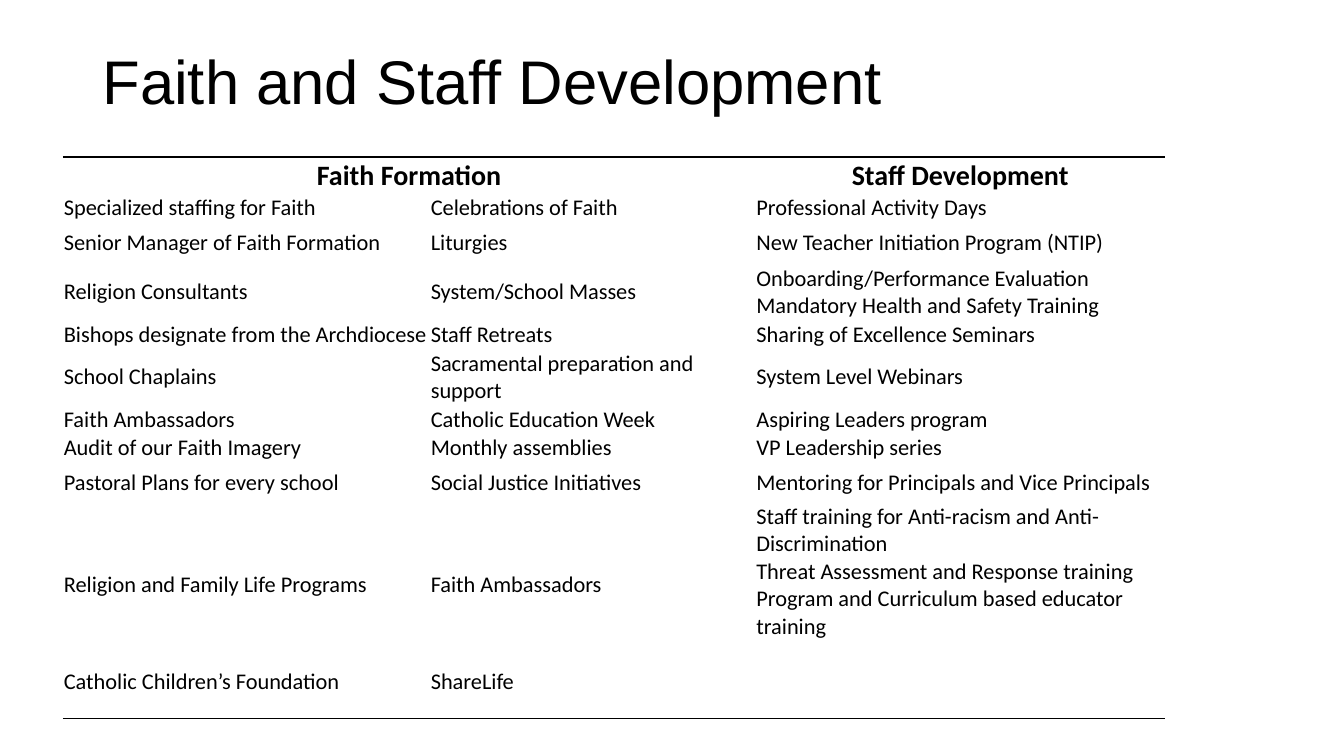
from lxml.etree import SubElement, Element
from pptx import Presentation
from pptx.dml.color import RGBColor
from pptx.enum.text import MSO_ANCHOR, PP_ALIGN
from pptx.oxml.ns import qn
from pptx.util import Pt

TITLE = "Faith and Staff Development"
HEADINGS = ["Faith Formation", "", "Staff Development"]
# Row height, then faith staffing, faith events and staff development
ROWS = [
    (20.5, "Specialized staffing for Faith", "Celebrations of Faith", "Professional Activity Days"),
    (29.5, "Senior Manager of Faith Formation", "Liturgies", "New Teacher Initiation Program (NTIP)"),
    (40.5, "Religion Consultants", "System/School Masses",
     "Onboarding/Performance Evaluation\nMandatory Health and Safety Training"),
    (20.5, "Bishops designate from the Archdiocese", "Staff Retreats", "Sharing of Excellence Seminars"),
    (40, "School Chaplains", "Sacramental preparation and support", "System Level Webinars"),
    (20.3, "Faith Ambassadors", "Catholic Education Week", "Aspiring Leaders program"),
    (20.3, "Audit of our Faith Imagery", "Monthly assemblies", "VP Leadership series"),
    (29, "Pastoral Plans for every school", "Social Justice Initiatives",
     "Mentoring for Principals and Vice Principals"),
    (117.5, "Religion and Family Life Programs", "Faith Ambassadors",
     "Staff training for Anti-racism and Anti-Discrimination\n"
     "Threat Assessment and Response training\n"
     "Program and Curriculum based educator training"),
    (20.3, "Catholic Children’s Foundation", "ShareLife", ""),
    (17, "", "", ""),
]
HEADING_HEIGHT = 26
COLUMN_WIDTHS = [262.1, 232.6, 292.6]
TABLE_LEFT, TABLE_TOP = 44.9, 112.2
COLORS = {"ink": "000000"}
PLAIN_TABLE_STYLE = "{2D5ABB26-0587-4C30-8999-92F81FD0307C}"


def set_font(paragraph, name, size, bold=False):
    font = paragraph.font
    font.name, font.size, font.bold = name, Pt(size), bold
    font.color.rgb = RGBColor.from_string(COLORS["ink"])


def add_rule(cell, side):
    """Draw a 1 pt border on the cell; side is 'lnT' or 'lnB'."""
    rule = Element(qn(f"a:{side}"), w=str(Pt(1)))
    fill = SubElement(rule, qn("a:solidFill"))
    SubElement(fill, qn("a:srgbClr"), val=COLORS["ink"])
    cell._tc.get_or_add_tcPr().insert(0, rule)


def fill_cell(cell, text, heading):
    cell.text = text
    cell.fill.background()
    cell.vertical_anchor = MSO_ANCHOR.MIDDLE
    cell.margin_left = cell.margin_right = cell.margin_top = Pt(0.72)
    cell.margin_bottom = 0
    size = 20 if heading else 16 if text else 10
    for paragraph in cell.text_frame.paragraphs:
        set_font(paragraph, "Calibri", size, heading)
        paragraph.alignment = PP_ALIGN.CENTER if heading else PP_ALIGN.LEFT


def add_programs(slide):
    heights = [HEADING_HEIGHT] + [row[0] for row in ROWS]
    contents = [HEADINGS] + [row[1:] for row in ROWS]
    programs = slide.shapes.add_table(
        len(contents), len(COLUMN_WIDTHS), Pt(TABLE_LEFT), Pt(TABLE_TOP),
        Pt(sum(COLUMN_WIDTHS)), Pt(sum(heights))).table
    programs.first_row = programs.horz_banding = False
    programs._tbl.tblPr.find(qn("a:tableStyleId")).text = PLAIN_TABLE_STYLE
    for column, width in zip(programs.columns, COLUMN_WIDTHS):
        column.width = Pt(width)
    for r, (height, texts) in enumerate(zip(heights, contents)):
        programs.rows[r].height = Pt(height)
        for c, text in enumerate(texts):
            cell = programs.cell(r, c)
            fill_cell(cell, text, heading=r == 0)
            if text.count("\n") == 2:
                cell.vertical_anchor = MSO_ANCHOR.TOP
            if r == 0:
                add_rule(cell, "lnT")
            elif r == len(contents) - 1:
                add_rule(cell, "lnB")
    programs.cell(0, 0).merge(programs.cell(0, 1))


def main():
    deck = Presentation()
    deck.slide_width, deck.slide_height = Pt(960), Pt(540)
    slide = deck.slides.add_slide(deck.slide_layouts[5])

    title = slide.shapes.title
    title.left, title.top, title.width, title.height = Pt(66), Pt(7.9), Pt(828), Pt(104.4)
    title.text = TITLE
    title.text_frame.vertical_anchor = MSO_ANCHOR.MIDDLE
    heading = title.text_frame.paragraphs[0]
    heading.alignment = PP_ALIGN.LEFT
    heading.line_spacing = 0.9
    set_font(heading, "Arial", 44)

    add_programs(slide)
    deck.save("out.pptx")


if __name__ == "__main__":
    main()
